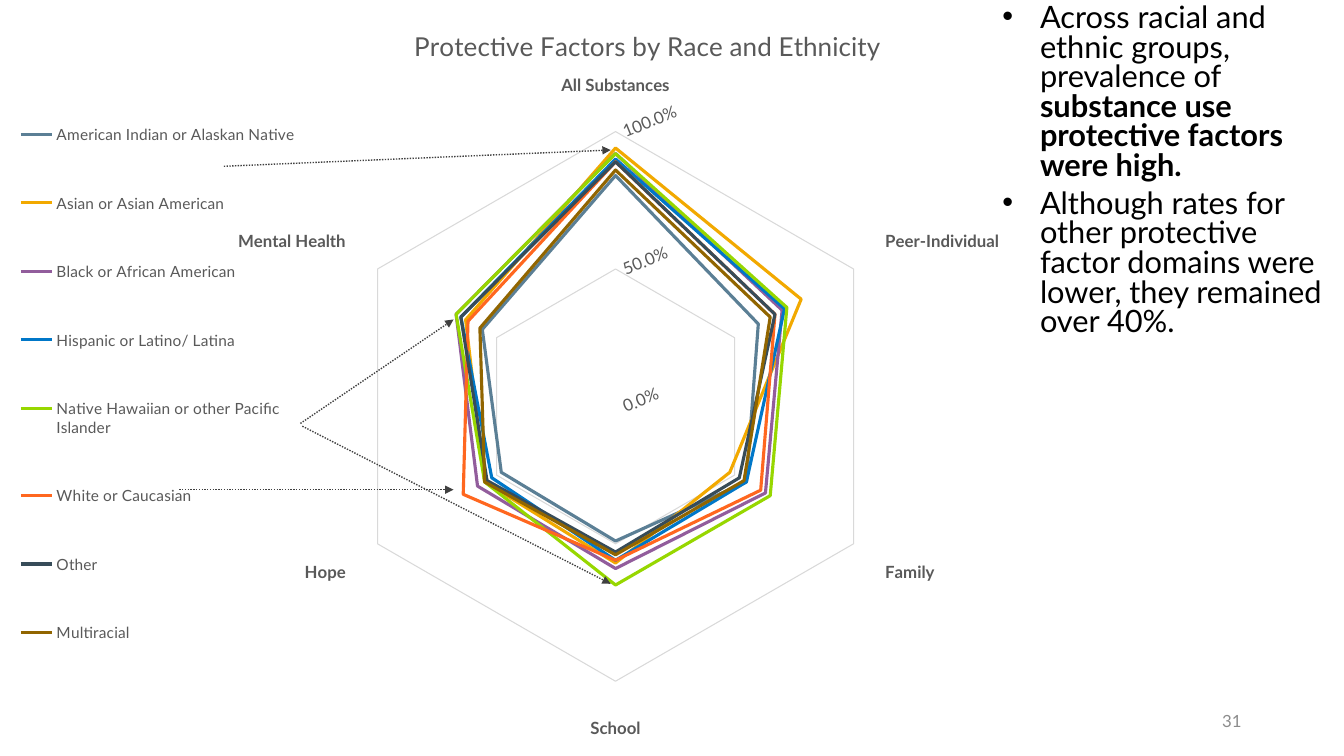
from typing import NamedTuple

import pptx
import pptx.chart.data
import pptx.dml.color
import pptx.enum.chart
import pptx.enum.dml
import pptx.enum.shapes
import pptx.enum.text
import pptx.oxml
import pptx.oxml.ns
import pptx.util
from lxml import etree

Cm, Pt = pptx.util.Cm, pptx.util.Pt
qn = pptx.oxml.ns.qn
FONT, GREY, GRID = "Lato", "595959", "D9D9D9"


class Group(NamedTuple):
    name: str
    color: str
    rates: tuple[float, ...]


class Arrow(NamedTuple):
    x1: float
    y1: float
    x2: float
    y2: float


DOMAINS = ["All Substances", "Peer-Individual", "Family", "School", "Hope", "Mental Health"]
GROUPS = [
    Group("American Indian or Alaskan Native", "5B7F95", (0.84, 0.6, 0.55, 0.49, 0.48, 0.56)),
    Group("Asian or Asian American", "F2A900", (0.94, 0.78, 0.48, 0.57, 0.55, 0.63)),
    Group("Black or African American", "925D9C", (0.92, 0.7, 0.63, 0.59, 0.58, 0.67)),
    Group("Hispanic or Latino/ Latina", "0077C8", (0.9, 0.71, 0.55, 0.56, 0.52, 0.65)),
    Group("Native Hawaiian or other Pacific Islander", "97D700",
          (0.92, 0.72, 0.65, 0.65, 0.55, 0.67)),
    Group("White or Caucasian", "FF671F", (0.89, 0.67, 0.61, 0.56, 0.64, 0.62)),
    Group("Other", "374C59", (0.89, 0.67, 0.52, 0.53, 0.54, 0.65)),
    Group("Multiracial", "916500", (0.86, 0.65, 0.54, 0.54, 0.55, 0.57)),
]
ASIAN_ARROW = Arrow(5.64, 4.19, 15.39, 3.78)
WHITE_ARROW = Arrow(4.52, 12.34, 11.43, 12.34)
HAWAIIAN_ARROWS = [Arrow(7.62, 10.74, 15.39, 14.71), Arrow(7.57, 10.67, 11.43, 8.05)]


def rgb(color: str):
    return pptx.dml.color.RGBColor.from_string(color)


def style_font(font, size: float, color: str, bold: bool = False) -> None:
    font.name, font.size, font.bold = FONT, Pt(size), bold
    font.color.rgb = rgb(color)


def style_line(line, color: str, width: float) -> None:
    line.color.rgb = rgb(color)
    line.width = Pt(width)


def add_run(p, text: str, *, size: float, color: str = "000000", bold: bool = False) -> None:
    r = p.add_run()
    r.text = text
    style_font(r.font, size, color, bold)


def add_text_frame(shapes, left: float, top: float, width: float, height: float):
    tf = shapes.add_textbox(Cm(left), Cm(top), Cm(width), Cm(height)).text_frame
    tf.word_wrap = True
    return tf


def add_bullet(p) -> None:
    p.line_spacing, p.space_after = 0.8, Pt(6)
    pPr = p._p.get_or_add_pPr()
    pPr.set("marL", str(Cm(0.95)))
    pPr.set("indent", str(-Cm(0.95)))
    etree.SubElement(pPr, qn("a:buFont")).set("typeface", "Arial")
    etree.SubElement(pPr, qn("a:buChar")).set("char", "•")


def add_arrow(shapes, arrow: Arrow) -> None:
    sp = shapes.add_connector(pptx.enum.shapes.MSO_CONNECTOR.STRAIGHT,
                              *(Cm(v) for v in arrow))
    style_line(sp.line, "404040", 1)
    sp.line.dash_style = pptx.enum.dml.MSO_LINE.ROUND_DOT
    ln = sp.line._get_or_add_ln()
    etree.SubElement(ln, qn("a:tailEnd")).set("type", "triangle")
    etree.SubElement(sp._element.spPr, qn("a:effectLst"))


def set_layout(parent, before: str, **settings) -> None:
    """Place a chart part by hand, as fractions of the chart area."""
    for old in parent.findall(qn("c:layout")):
        parent.remove(old)
    layout = etree.Element(qn("c:layout"))
    manual = etree.SubElement(layout, qn("c:manualLayout"))
    for tag, value in settings.items():
        etree.SubElement(manual, qn(f"c:{tag}")).set("val", str(value))
    parent.find(qn(before)).addprevious(layout)


def add_radar(shapes) -> None:
    data = pptx.chart.data.CategoryChartData(number_format="0.0%")
    data.categories = DOMAINS
    for group in GROUPS:
        data.add_series(group.name, group.rates)
    chart = shapes.add_chart(pptx.enum.chart.XL_CHART_TYPE.RADAR, Cm(-0.25), Cm(0),
                             Cm(30.2), Cm(18.95), data).chart
    style_font(chart.font, 10, "000000")

    # Series
    for series, group in zip(chart.plots[0].series, GROUPS):
        style_line(series.format.line, group.color, 2.25)
        series.smooth = False

    # Axes
    cat, val = chart.category_axis, chart.value_axis
    for axis in (cat, val):
        axis.major_tick_mark = axis.minor_tick_mark = pptx.enum.chart.XL_TICK_MARK.NONE
        style_font(axis.tick_labels.font, 12, GREY, axis is cat)
    cat.has_major_gridlines = False
    style_line(cat.format.line, GRID, 0.75)
    val.minimum_scale, val.maximum_scale, val.major_unit = 0, 1, 0.5
    val.has_major_gridlines = True
    style_line(val.major_gridlines.format.line, GRID, 0.75)
    val.format.line.fill.background()
    val.tick_labels.number_format = "0.0%"
    val.tick_labels.number_format_is_linked = False
    val._element.find(qn("c:txPr")).find(qn("a:bodyPr")).set("rot", "-1320000")

    # Title and legend
    chart.has_title = True
    title = chart.chart_title
    add_run(title.text_frame.paragraphs[0], "Protective Factors by Race and Ethnicity",
            size=18.6, color=GREY)
    title.include_in_layout = False
    chart.has_legend = True
    chart.legend.position = pptx.enum.chart.XL_LEGEND_POSITION.LEFT
    chart.legend.include_in_layout = False
    style_font(chart.legend.font, 11, GREY)

    # Placement inside the chart area
    set_layout(title._element, "c:overlay", xMode="edge", yMode="edge", x=0.35, y=0.03)
    set_layout(chart.legend._element, "c:overlay", xMode="edge", yMode="edge",
               x=0.02, y=0.1, w=0.24, h=0.82)
    set_layout(chart._chartSpace.chart.plotArea, "c:radarChart", layoutTarget="inner",
               xMode="edge", yMode="edge", x=0.251, y=0.175, w=0.542, h=0.731)


def main() -> None:
    prs = pptx.Presentation()
    prs.slide_width, prs.slide_height = Cm(33.87), Cm(19.05)
    shapes = prs.slides.add_slide(prs.slide_layouts[6]).shapes

    # Slide number
    tf = add_text_frame(shapes, 23.92, 17.66, 7.62, 1.01)
    tf.vertical_anchor = pptx.enum.text.MSO_ANCHOR.MIDDLE
    p = tf.paragraphs[0]
    p.alignment = pptx.enum.text.PP_ALIGN.RIGHT
    add_run(p, "31", size=12, color="8C8C8C")

    # Findings
    tf = add_text_frame(shapes, 25.01, 0, 8.86, 9.47)
    p = tf.paragraphs[0]
    add_bullet(p)
    add_run(p, "Across racial and ethnic groups, prevalence of ", size=22)
    add_run(p, "substance use protective factors were high.", size=22, bold=True)
    p = tf.add_paragraph()
    add_bullet(p)
    add_run(p, "Although rates for other protective factor domains were lower, "
               "they remained over 40%.", size=22)

    # Chart with arrows from legend entries to their peaks
    add_radar(shapes)
    add_arrow(shapes, ASIAN_ARROW)
    add_arrow(shapes, WHITE_ARROW)
    pair = shapes.add_group_shape()
    for arrow in HAWAIIAN_ARROWS:
        add_arrow(pair.shapes, arrow)

    prs.save("out.pptx")


if __name__ == "__main__":
    main()
